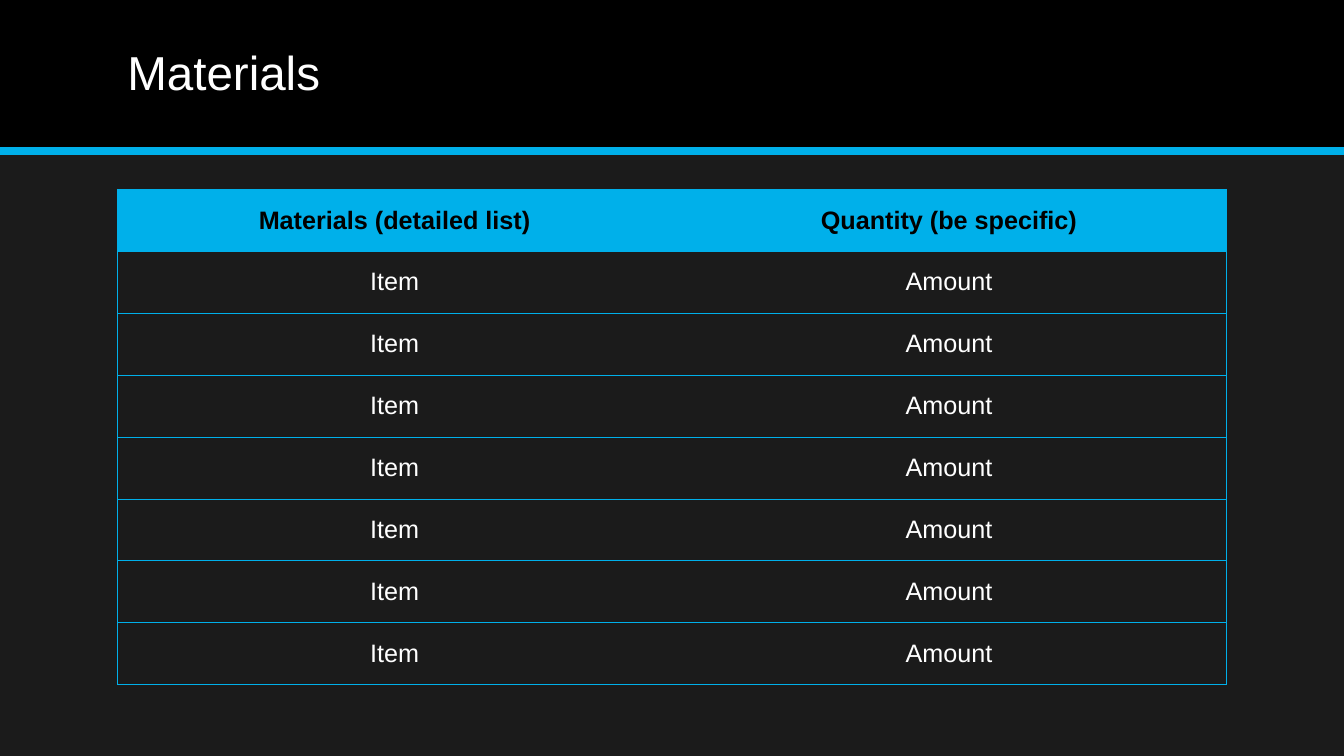
from lxml import etree
from pptx import Presentation
from pptx import util as u
from pptx.dml.color import RGBColor
from pptx.enum import shapes, text
from pptx.oxml import ns

TITLE = "Materials"
HEADER = ("Materials (detailed list)", "Quantity (be specific)")
ROWS = [HEADER] + [("Item", "Amount")] * 7

COLOURS = {"background": "1B1B1B", "band": "000000", "accent": "00B0EA",
           "light": "FFFFFF", "dark": "000000"}
TITLE_FONT = {"name": "Arial", "size": u.Pt(34), "bold": False}
HEADER_FONT = {"name": "Arial", "size": u.Pt(18), "bold": True}
BODY_FONT = {**HEADER_FONT, "bold": False}

SLIDE_WIDTH, SLIDE_HEIGHT = u.Cm(33.87), u.Cm(19.05)
BAND_HEIGHT = u.Cm(3.81)
LEFT, CONTENT_WIDTH = u.Cm(2.96), u.Cm(27.94)
TITLE_TOP, TITLE_HEIGHT = u.Cm(0.36), u.Cm(3.05)
TABLE_TOP, ROW_HEIGHT = u.Cm(4.77), u.Cm(1.56)


def colour(name):
    return RGBColor.from_string(COLOURS[name])


def write(paragraph, words, font_values, colour_name):
    run = paragraph.add_run()
    run.text = words
    for attribute, value in font_values.items():
        setattr(run.font, attribute, value)
    run.font.color.rgb = colour(colour_name)


def set_border(cell, side, visible):
    """Draw a thin accent border on side L, R, T or B, or clear it."""
    properties = cell._tc.get_or_add_tcPr()
    line = etree.SubElement(properties, ns.qn(f"a:ln{side}"), w=str(u.Pt(0.5)))
    if visible:
        fill = etree.SubElement(line, ns.qn("a:solidFill"))
        etree.SubElement(fill, ns.qn("a:srgbClr"), val=COLOURS["accent"])
    else:
        etree.SubElement(line, ns.qn("a:noFill"))


def add_header_band(slide):
    band = slide.shapes.add_shape(
        shapes.MSO_SHAPE.RECTANGLE, 0, 0, SLIDE_WIDTH, BAND_HEIGHT)
    band.shadow.inherit = False
    band.fill.solid()
    band.fill.fore_color.rgb = colour("band")
    band.line.fill.background()

    rule = slide.shapes.add_connector(
        shapes.MSO_CONNECTOR.STRAIGHT, 0, BAND_HEIGHT, SLIDE_WIDTH, BAND_HEIGHT)
    rule.line.color.rgb = colour("accent")
    rule.line.width = u.Pt(6)
    etree.SubElement(rule._element.spPr, ns.qn("a:effectLst"))


def add_title(slide):
    box = slide.shapes.add_textbox(LEFT, TITLE_TOP, CONTENT_WIDTH, TITLE_HEIGHT)
    frame = box.text_frame
    frame.word_wrap = True
    frame.vertical_anchor = text.MSO_ANCHOR.MIDDLE
    paragraph = frame.paragraphs[0]
    paragraph.line_spacing = 0.9
    write(paragraph, TITLE, TITLE_FONT, "light")


def add_materials_table(slide):
    columns = len(HEADER)
    table = slide.shapes.add_table(
        len(ROWS), columns, LEFT, TABLE_TOP, CONTENT_WIDTH,
        ROW_HEIGHT * len(ROWS)).table
    table.horz_banding = False
    for row_index, row in enumerate(ROWS):
        is_header = row_index == 0
        for column_index, words in enumerate(row):
            cell = table.cell(row_index, column_index)
            borders = {"L": column_index == 0, "R": column_index == columns - 1,
                       "T": True, "B": True}
            for side, visible in borders.items():
                set_border(cell, side, visible)
            if is_header:
                cell.fill.solid()
                cell.fill.fore_color.rgb = colour("accent")
            else:
                cell.fill.background()
            cell.vertical_anchor = text.MSO_ANCHOR.MIDDLE
            paragraph = cell.text_frame.paragraphs[0]
            paragraph.alignment = text.PP_ALIGN.CENTER
            write(paragraph, words, HEADER_FONT if is_header else BODY_FONT,
                  "dark" if is_header else "light")


def main():
    presentation = Presentation()
    presentation.slide_width = SLIDE_WIDTH
    presentation.slide_height = SLIDE_HEIGHT
    slide = presentation.slides.add_slide(presentation.slide_layouts[6])
    slide.background.fill.solid()
    slide.background.fill.fore_color.rgb = colour("background")
    add_header_band(slide)
    add_title(slide)
    add_materials_table(slide)
    presentation.save("out.pptx")


if __name__ == "__main__":
    main()
